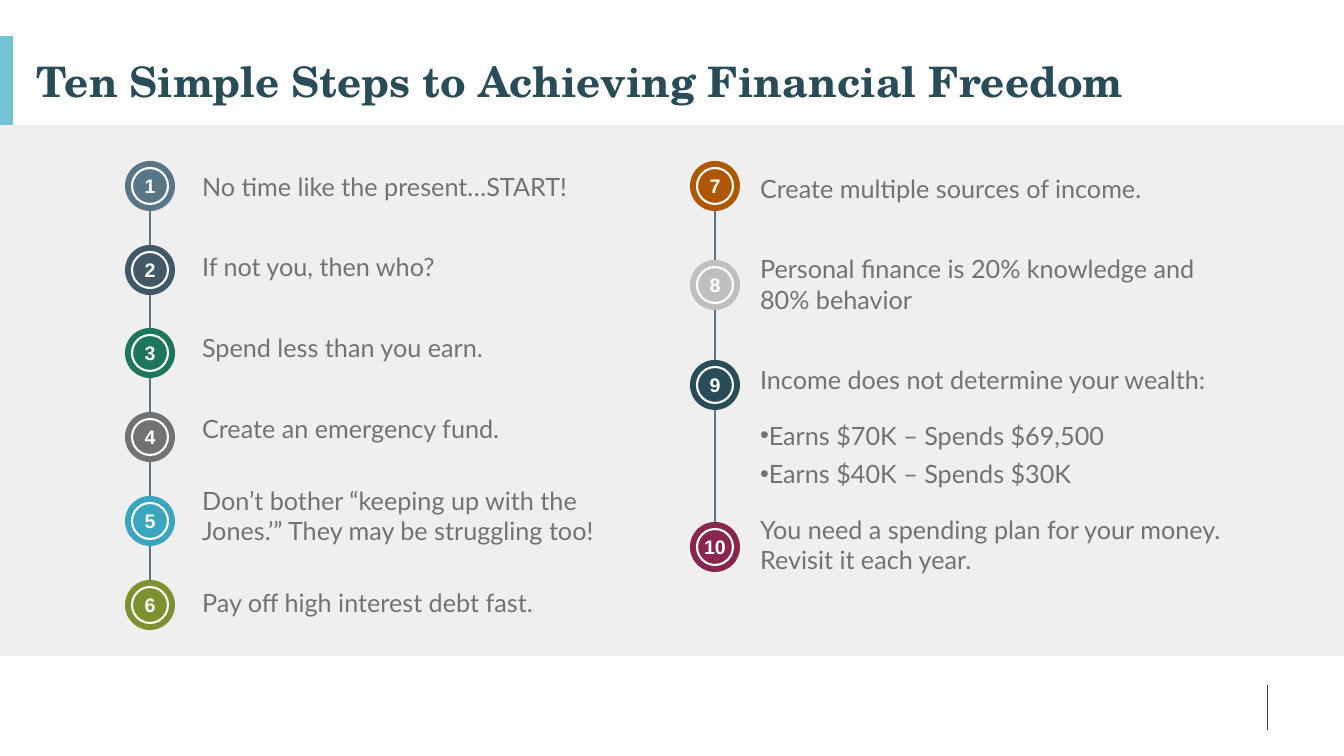
from dataclasses import dataclass

from lxml.etree import SubElement
from pptx import Presentation
from pptx.dml.color import RGBColor
from pptx.enum.shapes import MSO_CONNECTOR, MSO_SHAPE
from pptx.enum.text import MSO_ANCHOR, MSO_AUTO_SIZE, PP_ALIGN
from pptx.oxml.ns import qn
from pptx.util import Emu, Pt


def px(n: int) -> Emu:
    """Slide pixels, 1344 across 13.33 inches, as EMU."""
    return Emu(round(n * 914400 / 100.8))


@dataclass(frozen=True)
class Theme:
    heading_font: str = "TeX Gyre Schola"
    body_font: str = "Lato"
    badge_font: str = "Arial"
    heading_size: int = 30
    body_size: int = 18
    badge_size: int = 14
    navy: str = "294C59"
    aqua: str = "74C3D5"
    band: str = "E1E1E1"
    spine: str = "597688"
    text: str = "717273"
    white: str = "FFFFFF"


@dataclass(frozen=True)
class Badge:
    number: int
    top: int
    color: str


@dataclass(frozen=True)
class Item:
    text: str
    before: int = 36
    bullet: bool = False


@dataclass(frozen=True)
class Column:
    badge_left: int
    badges: list[Badge]
    box: tuple[int, int, int, int]
    items: list[Item]


THEME = Theme()
BADGE, RING = 50, 36
FIRST_TOP, STEP = 161, 83.7
LEFT_COLORS = ["597688", "435866", "1D765C", "717273", "3AA5BC", "7D9130"]

COLUMNS = [
    Column(
        125,
        [Badge(i + 1, round(FIRST_TOP + i * STEP), c) for i, c in enumerate(LEFT_COLORS)],
        (192, 166, 428, 517),
        [
            Item("No time like the present…START!", 0),
            Item("If not you, then who?"),
            Item("Spend less than you earn."),
            Item("Create an emergency fund."),
            Item("Don’t bother “keeping up with the Jones.’” They may be struggling too!", 30),
            Item("Pay off high interest debt fast.", 30),
        ],
    ),
    Column(
        690,
        [Badge(7, FIRST_TOP, "AE5600"), Badge(8, 260, "BFBFBF"),
         Badge(9, 360, "294C59"), Badge(10, 522, "89264F")],
        (750, 168, 498, 517),
        [
            Item("Create multiple sources of income.", 0),
            Item("Personal finance is 20% knowledge and 80% behavior"),
            Item("Income does not determine your wealth:"),
            Item("Earns $70K – Spends $69,500", 18, True),
            Item("Earns $40K – Spends $30K", 6, True),
            Item("You need a spending plan for your money. Revisit it each year.", 18),
        ],
    ),
]


def rgb(color: str) -> RGBColor:
    return RGBColor.from_string(color)


def style_runs(p, font: str, size: int, color: str, bold: bool = False) -> None:
    for r in p.runs:
        r.font.name, r.font.size, r.font.bold = font, Pt(size), bold
        r.font.color.rgb = rgb(color)


def place(sp, left: int, top: int, width: int, height: int) -> None:
    sp.left, sp.top, sp.width, sp.height = px(left), px(top), px(width), px(height)


def add_line(s, x: int, y1: int, y2: int, color: str, weight: float) -> None:
    line = s.shapes.add_connector(MSO_CONNECTOR.STRAIGHT, px(x), px(y1), px(x), px(y2))
    line.line.color.rgb, line.line.width = rgb(color), Pt(weight)
    SubElement(line.element.spPr, qn("a:effectLst"))


def add_circle(group, left: int, top: int, size: int):
    sp = group.shapes.add_shape(MSO_SHAPE.OVAL, px(left), px(top), px(size), px(size))
    sp.shadow.inherit = False
    return sp


def add_badge(s, left: int, badge: Badge) -> None:
    group = s.shapes.add_group_shape()
    disc = add_circle(group, left, badge.top, BADGE)
    disc.fill.solid()
    disc.fill.fore_color.rgb = rgb(badge.color)
    disc.line.fill.background()

    inset = (BADGE - RING) // 2
    ring = add_circle(group, left + inset, badge.top + inset, RING)
    ring.fill.background()
    ring.line.color.rgb, ring.line.width = rgb(THEME.white), Pt(1.5)
    tf = ring.text_frame
    tf.margin_left = tf.margin_top = tf.margin_right = tf.margin_bottom = 0
    tf.vertical_anchor, tf.word_wrap = MSO_ANCHOR.MIDDLE, False
    tf.text = str(badge.number)
    p = tf.paragraphs[0]
    p.alignment = PP_ALIGN.CENTER
    style_runs(p, THEME.badge_font, THEME.badge_size, THEME.white, True)


def fill_list(body, column: Column) -> None:
    place(body, *column.box)
    tf = body.text_frame
    tf.text = "\n".join(item.text for item in column.items)
    tf.auto_size, tf.word_wrap = MSO_AUTO_SIZE.NONE, True
    tf.vertical_anchor = MSO_ANCHOR.TOP
    for p, item in zip(tf.paragraphs, column.items):
        pPr = p._p.get_or_add_pPr()
        pPr.set("marL", "0")
        pPr.set("indent", str(px(-31) if item.bullet else 0))
        if item.bullet:
            SubElement(pPr, qn("a:buChar")).set("char", "•")
        else:
            SubElement(pPr, qn("a:buNone"))
        p.space_before = Pt(item.before)
        style_runs(p, THEME.body_font, THEME.body_size, THEME.text)


def main() -> None:
    prs = Presentation()
    prs.slide_width, prs.slide_height = px(1344), px(756)
    s = prs.slides.add_slide(prs.slide_layouts[3])
    title, *bodies = s.placeholders

    # Backdrop: half-transparent band and accent lines
    band = s.shapes.add_shape(MSO_SHAPE.RECTANGLE, 0, px(125), px(1344), px(531))
    band.shadow.inherit = False
    band.fill.solid()
    band.fill.fore_color.rgb = rgb(THEME.band)
    SubElement(band.element.spPr.find(".//" + qn("a:srgbClr")), qn("a:alpha")).set("val", "50000")
    band.line.fill.background()
    add_line(s, 6, 125, 36, THEME.aqua, 10)
    add_line(s, 1268, 685, 730, THEME.navy, 0.75)

    # Spines behind the badges
    for column in COLUMNS:
        first, last = column.badges[0], column.badges[-1]
        add_line(s, column.badge_left + BADGE // 2, first.top + BADGE // 2,
                 last.top + BADGE // 2, THEME.spine, 1)

    # Title, brought in front of the backdrop with the lists
    for ph in (title, *bodies):
        s.shapes.element.append(ph.element)
    place(title, 26, 35, 1159, 77)
    tf = title.text_frame
    tf.text = "Ten Simple Steps to Achieving Financial Freedom"
    tf.auto_size, tf.vertical_anchor = MSO_AUTO_SIZE.NONE, MSO_ANCHOR.BOTTOM
    p = tf.paragraphs[0]
    p.alignment, p.line_spacing = PP_ALIGN.LEFT, 0.9
    style_runs(p, THEME.heading_font, THEME.heading_size, THEME.navy, True)

    # Lists and numbered badges
    for body, column in zip(bodies, COLUMNS):
        fill_list(body, column)
        for badge in column.badges:
            add_badge(s, column.badge_left, badge)

    prs.save("out.pptx")


if __name__ == "__main__":
    main()
